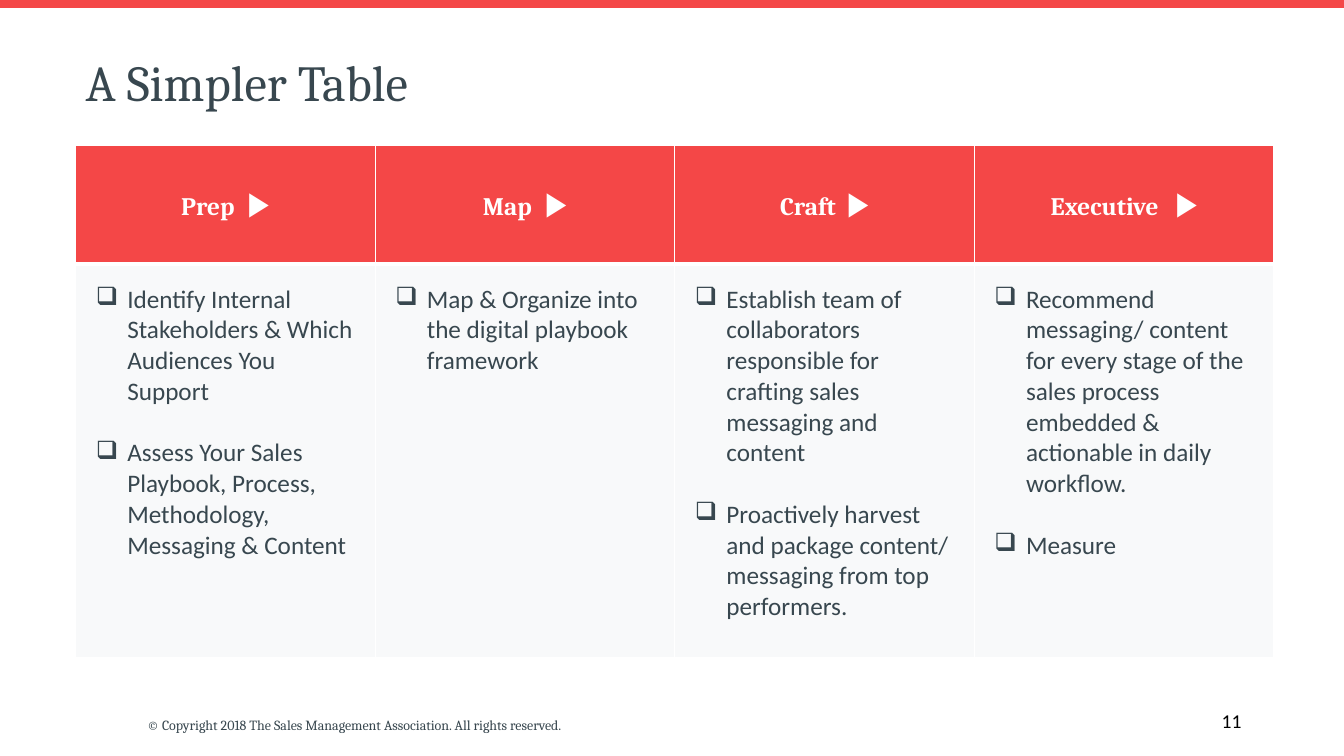
from lxml import etree
from pptx import Presentation
from pptx.dml.color import RGBColor
from pptx.enum.shapes import MSO_CONNECTOR
from pptx.enum.text import MSO_ANCHOR, PP_ALIGN
from pptx.oxml.ns import qn
from pptx.util import Pt

RED = RGBColor(0xF4, 0x47, 0x47)
SLATE = RGBColor(0x38, 0x47, 0x4F)
PALE = RGBColor(0xF8, 0xF9, 0xFA)
WHITE = RGBColor(0xFF, 0xFF, 0xFF)
BLACK = RGBColor(0x00, 0x00, 0x00)
STRAIGHT = MSO_CONNECTOR.STRAIGHT
TOP, MIDDLE = MSO_ANCHOR.TOP, MSO_ANCHOR.MIDDLE
LEFT, CENTER, RIGHT = PP_ALIGN.LEFT, PP_ALIGN.CENTER, PP_ALIGN.RIGHT

SERIF, SANS = "Cambria", "Calibri"
SLIDE_WIDTH, SLIDE_HEIGHT = 960, 540
HEADER_HEIGHT = 84.5
HANGING = 22.5

TITLE_FORMAT = {"name": SERIF, "size": Pt(36), "color": SLATE}
COPYRIGHT_FORMAT = {"name": SERIF, "size": Pt(10), "color": SLATE}
NUMBER_FORMAT = {"name": SANS, "size": Pt(14), "color": BLACK}
STAGE_FORMAT = {"name": SERIF, "size": Pt(18), "color": WHITE, "bold": True}
ARROW_FORMAT = {**STAGE_FORMAT, "size": Pt(24)}
TASK_FORMAT = {"name": SANS, "size": Pt(18), "color": SLATE, "bold": False}

# Stage name, extra points between name and arrow, tasks
STAGES = [
    ("Prep", 5.3, [
        "Identify Internal Stakeholders & Which Audiences You Support",
        "Assess Your Sales Playbook, Process, Methodology, Messaging & Content",
    ]),
    ("Map", 5.3, ["Map & Organize into the digital playbook framework"]),
    ("Craft", 4, [
        "Establish team of collaborators responsible for crafting sales "
        "messaging and content",
        "Proactively harvest and package content/ messaging from top "
        "performers.",
    ]),
    ("Executive", 8, [
        "Recommend messaging/ content for every stage of the sales process "
        "embedded & actionable in daily workflow.",
        "Measure",
    ]),
]


def format_font(font, values):
    for key, value in values.items():
        if key == "color":
            font.color.rgb = value
        else:
            setattr(font, key, value)


def add_run(paragraph, text, values):
    run = paragraph.add_run()
    run.text = text
    format_font(run.font, values)
    return run


def add_top_band(slide, width):
    band = slide.shapes.add_connector(STRAIGHT, 0, Pt(3), Pt(width), Pt(3))
    band.line.color.rgb = RED
    band.line.width = Pt(6)
    etree.SubElement(band._element.spPr, qn("a:effectLst"))


def set_title(slide, left, top, width, height):
    title = slide.shapes.title
    title.left, title.top = Pt(left), Pt(top)
    title.width, title.height = Pt(width), Pt(height)
    title.text_frame.vertical_anchor = TOP
    paragraph = title.text_frame.paragraphs[0]
    paragraph.alignment = LEFT
    paragraph.line_spacing = 0.9
    add_run(paragraph, "A Simpler Table", TITLE_FORMAT)


def add_label(slide, box, text, values, alignment, anchor, wrap):
    label = slide.shapes.add_textbox(*map(Pt, box))
    frame = label.text_frame
    frame.word_wrap = wrap
    frame.vertical_anchor = anchor
    frame.paragraphs[0].alignment = alignment
    add_run(frame.paragraphs[0], text, values)


def add_footer(slide, left, top, width, height):
    add_label(slide, (left, top + 8, 332, 19.5),
              "© Copyright 2018 The Sales Management Association. "
              "All rights reserved.", COPYRIGHT_FORMAT, LEFT, TOP, False)
    add_label(slide, (left + width - 216, top, 216, height),
              "11", NUMBER_FORMAT, RIGHT, MIDDLE, True)


def style_cell(cell, color, bottom_width):
    """Give the cell white borders and a solid fill."""
    properties = cell._tc.get_or_add_tcPr()
    for side, width in (("L", 1), ("R", 1), ("T", 1), ("B", bottom_width)):
        border = etree.SubElement(properties, qn(f"a:ln{side}"),
                                  w=str(Pt(width)))
        fill = etree.SubElement(border, qn("a:solidFill"))
        etree.SubElement(fill, qn("a:srgbClr"), val=str(WHITE))
    cell.fill.solid()
    cell.fill.fore_color.rgb = color


def fill_stage(cell, name, gap):
    style_cell(cell, RED, 3)
    cell.vertical_anchor = MIDDLE
    paragraph = cell.text_frame.paragraphs[0]
    paragraph.alignment = CENTER
    add_run(paragraph, name, STAGE_FORMAT)
    space = add_run(paragraph, " ", STAGE_FORMAT)
    space._r.get_or_add_rPr().set("spc", str(round(gap * 100)))
    add_run(paragraph, "▶", ARROW_FORMAT)


def fill_tasks(cell, tasks):
    style_cell(cell, PALE, 1)
    cell.vertical_anchor = TOP
    cell.margin_left = cell.margin_right = cell.margin_top = Pt(14.4)
    cell.margin_bottom = Pt(3.6)
    frame = cell.text_frame
    for index, task in enumerate(tasks):
        paragraph = frame.add_paragraph() if index else frame.paragraphs[0]
        properties = paragraph._p.get_or_add_pPr()
        properties.set("marL", str(Pt(HANGING)))
        properties.set("indent", str(-Pt(HANGING)))
        etree.SubElement(properties, qn("a:buChar"), char="❑")
        if index:
            paragraph.space_before = Pt(22)
        add_run(paragraph, task, TASK_FORMAT)


def add_stage_table(slide, left, top, width, height):
    table = slide.shapes.add_table(
        2, len(STAGES), Pt(left), Pt(top), Pt(width), Pt(height)).table
    table.horz_banding = False
    table.rows[0].height = Pt(HEADER_HEIGHT)
    table.rows[1].height = Pt(height - HEADER_HEIGHT)
    for column, (name, gap, tasks) in enumerate(STAGES):
        table.columns[column].width = Pt(width / len(STAGES))
        fill_stage(table.cell(0, column), name, gap)
        fill_tasks(table.cell(1, column), tasks)


def main():
    deck = Presentation()
    deck.slide_width, deck.slide_height = Pt(SLIDE_WIDTH), Pt(SLIDE_HEIGHT)
    slide = deck.slides.add_slide(deck.slide_layouts[5])
    add_top_band(slide, SLIDE_WIDTH)
    set_title(slide, 54, 37.5, 847.5, 62.5)
    add_stage_table(slide, 54, 104, 856, 366)
    add_footer(slide, 98, 500.5, 796, 29)
    deck.save("out.pptx")


if __name__ == "__main__":
    main()
